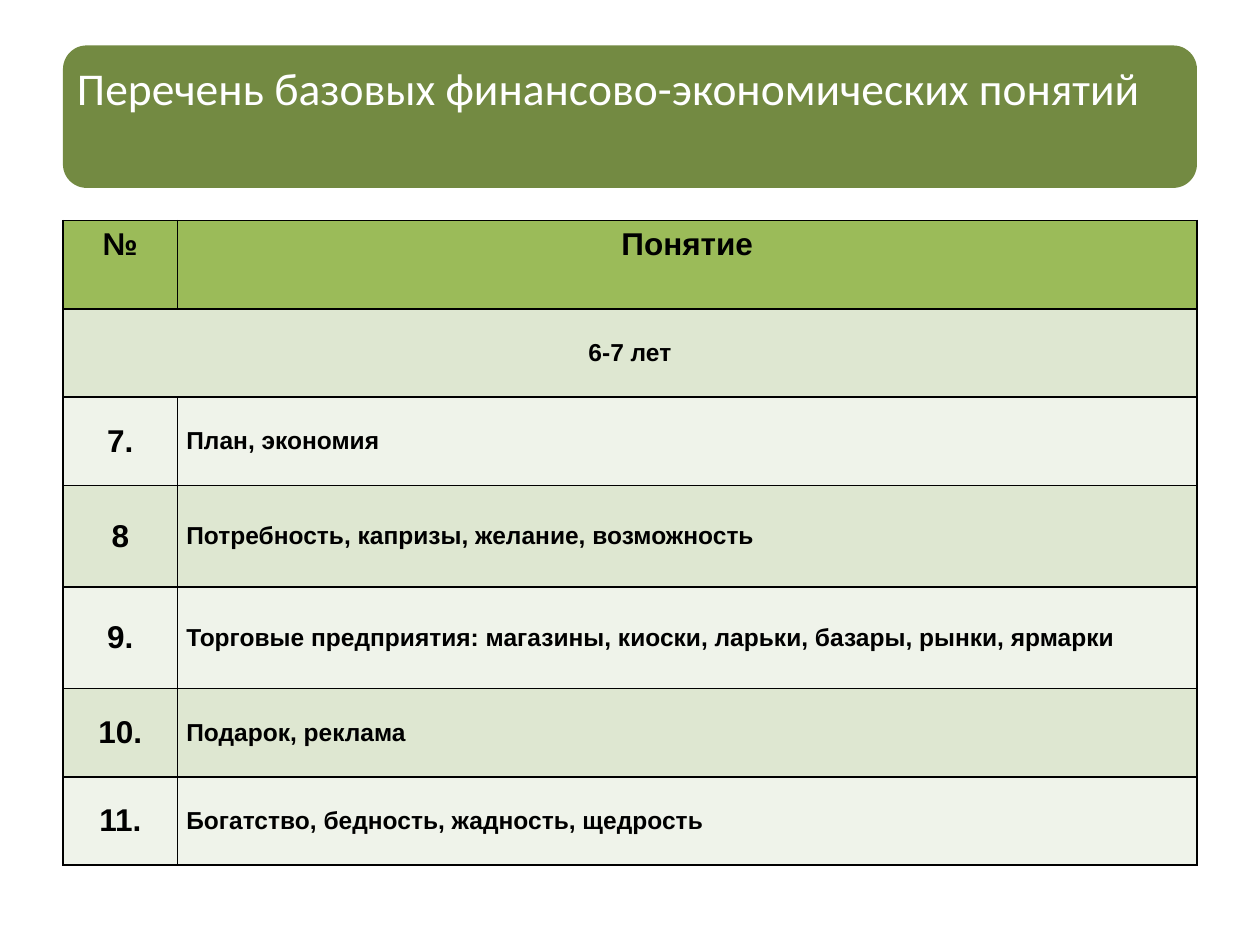
from dataclasses import dataclass

from lxml.etree import SubElement
from pptx import Presentation
from pptx.dml.color import RGBColor
from pptx.enum.shapes import MSO_SHAPE
from pptx.enum.text import MSO_ANCHOR, MSO_AUTO_SIZE, PP_ALIGN
from pptx.oxml.ns import qn
from pptx.util import Pt


@dataclass(frozen=True)
class Theme:
    banner: str = "738A42"
    header: str = "9BBB59"
    dark_band: str = "DEE7D1"
    light_band: str = "EFF3EA"
    white: str = "FFFFFF"
    black: str = "000000"
    title_font: str = "Calibri"
    table_font: str = "Arial"
    title_size: float = 26
    number_size: float = 18
    term_size: float = 14


THEME = Theme()
LEFT, WIDTH = 36, 648
BANNER_TOP, BANNER_HEIGHT = 26, 81.4
TABLE_TOP = 126
COLUMN_WIDTHS = (65.5, 582.5)
ROW_HEIGHT, TALL_ROW_HEIGHT = 50.5, 58
AGE_GROUP = "6-7 лет"
CONCEPTS = [
    ("7.", "План, экономия", ROW_HEIGHT),
    ("8", "Потребность, капризы, желание, возможность", TALL_ROW_HEIGHT),
    ("9.", "Торговые предприятия: магазины, киоски, ларьки, базары, рынки, ярмарки", TALL_ROW_HEIGHT),
    ("10.", "Подарок, реклама", ROW_HEIGHT),
    ("11.", "Богатство, бедность, жадность, щедрость", ROW_HEIGHT),
]


def write_text(frame, text, *, size, font=THEME.table_font, color=THEME.black,
               bold=True, align=PP_ALIGN.CENTER, line_spacing=None):
    para = frame.paragraphs[0]
    para.alignment = align
    para.line_spacing = line_spacing
    span = para.add_run()
    span.text = text
    span.font.name = font
    span.font.size = Pt(size)
    span.font.bold = bold
    span.font.color.rgb = RGBColor.from_string(color)


def add_banner(page, text):
    place = Pt(LEFT), Pt(BANNER_TOP), Pt(WIDTH), Pt(BANNER_HEIGHT)
    banner = page.shapes.add_shape(MSO_SHAPE.ROUNDED_RECTANGLE, *place)
    banner.shadow.inherit = False
    banner.fill.solid()
    banner.fill.fore_color.rgb = RGBColor.from_string(THEME.banner)
    banner.line.fill.background()

    title = page.shapes.title
    title.left, title.top, title.width, title.height = place
    title.element.addprevious(banner.element)
    frame = title.text_frame
    frame.word_wrap = True
    frame.auto_size = MSO_AUTO_SIZE.NONE
    frame.vertical_anchor = MSO_ANCHOR.TOP
    frame.margin_left = frame.margin_right = Pt(8)
    frame.margin_top = Pt(12)
    write_text(frame, text, size=THEME.title_size, font=THEME.title_font,
               color=THEME.white, bold=False, align=PP_ALIGN.LEFT, line_spacing=0.9)


def style_cell(cell, fill):
    properties = cell._tc.get_or_add_tcPr()
    for side in ("a:lnL", "a:lnR", "a:lnT", "a:lnB"):
        border = SubElement(properties, qn(side), w=str(Pt(1)))
        paint = SubElement(border, qn("a:solidFill"))
        SubElement(paint, qn("a:srgbClr"), val=THEME.black)
    cell.fill.solid()
    cell.fill.fore_color.rgb = RGBColor.from_string(fill)


def write_body_cell(cell, text, **text_format):
    cell.vertical_anchor = MSO_ANCHOR.MIDDLE
    cell.margin_left = cell.margin_right = Pt(5)
    cell.margin_top = cell.margin_bottom = 0
    write_text(cell.text_frame, text, **text_format)


def add_concept_table(page):
    heights = [ROW_HEIGHT, ROW_HEIGHT] + [height for _, _, height in CONCEPTS]
    table = page.shapes.add_table(len(heights), len(COLUMN_WIDTHS), Pt(LEFT), Pt(TABLE_TOP),
                                  Pt(WIDTH), Pt(sum(heights))).table
    for column, width in zip(table.columns, COLUMN_WIDTHS):
        column.width = Pt(width)
    for index, (row, height) in enumerate(zip(table.rows, heights)):
        row.height = Pt(height)
        band = THEME.dark_band if index % 2 else THEME.light_band
        for cell in row.cells:
            style_cell(cell, band if index else THEME.header)

    for column, heading in enumerate(("№", "Понятие")):
        write_text(table.cell(0, column).text_frame, heading, size=THEME.number_size)
    table.cell(1, 0).merge(table.cell(1, 1))
    write_body_cell(table.cell(1, 0), AGE_GROUP, size=THEME.term_size)
    for index, (number, term, _) in enumerate(CONCEPTS, start=2):
        write_body_cell(table.cell(index, 0), number, size=THEME.number_size)
        write_body_cell(table.cell(index, 1), term, size=THEME.term_size,
                        align=PP_ALIGN.JUSTIFY)


def main():
    deck = Presentation()
    deck.slide_width, deck.slide_height = Pt(720), Pt(540)
    page = deck.slides.add_slide(deck.slide_layouts[5])
    add_banner(page, "Перечень базовых финансово-экономических понятий")
    add_concept_table(page)
    deck.save("out.pptx")


if __name__ == "__main__":
    main()
